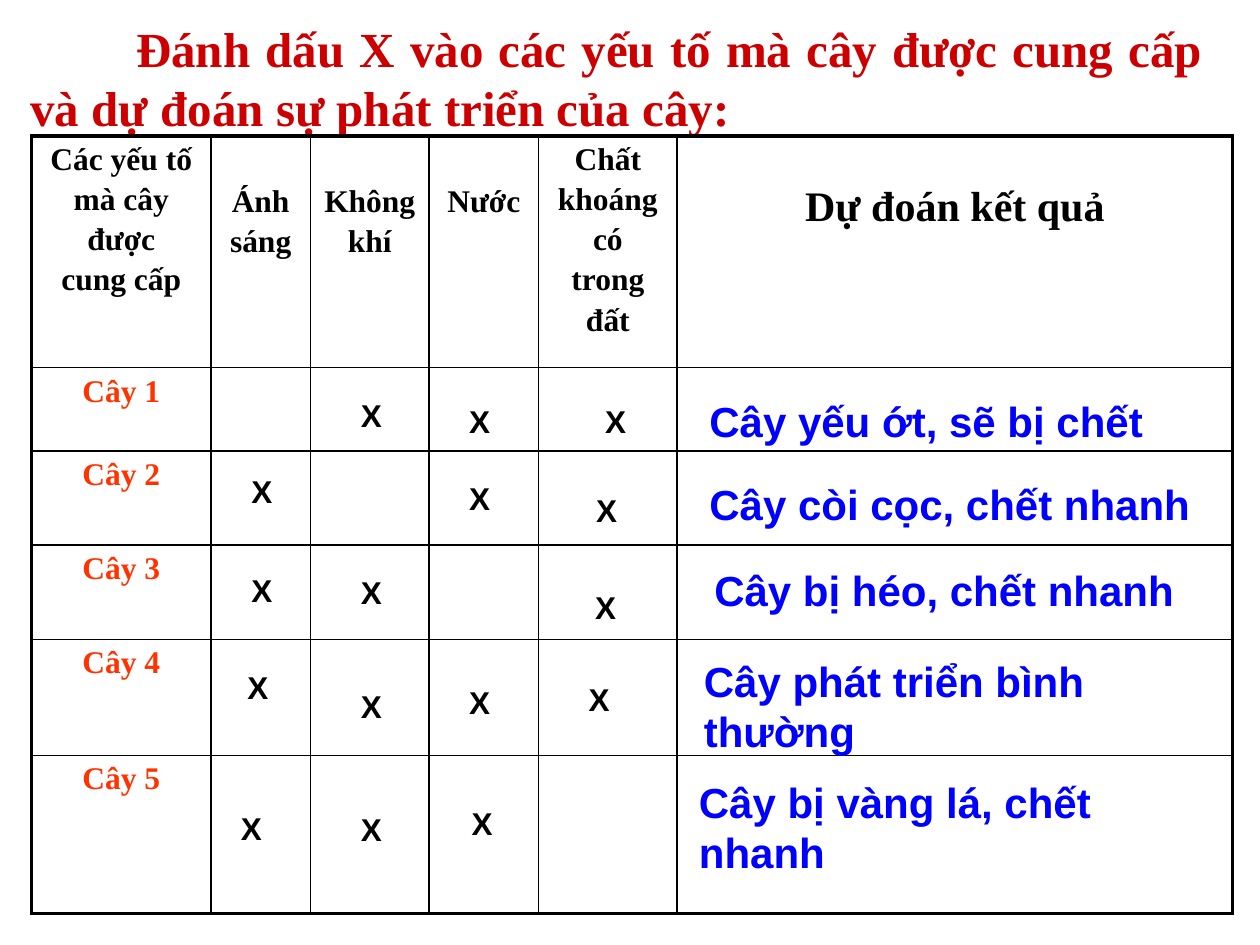
from itertools import accumulate

from lxml import etree
from pptx import Presentation
from pptx.dml.color import RGBColor
from pptx.enum.text import MSO_ANCHOR, MSO_AUTO_SIZE, PP_ALIGN
from pptx.oxml.ns import qn
from pptx.util import Cm, Pt

CENTER, LEFT, JUSTIFY = PP_ALIGN.CENTER, PP_ALIGN.LEFT, PP_ALIGN.JUSTIFY
TOP = MSO_ANCHOR.TOP
NO_AUTOFIT = MSO_AUTO_SIZE.NONE

BLACK = RGBColor(0x00, 0x00, 0x00)
RED = RGBColor(0xCC, 0x00, 0x00)
ORANGE = RGBColor(0xFF, 0x33, 0x00)
BLUE = RGBColor(0x00, 0x00, 0xFF)
SERIF, SANS = "Times New Roman", "Arial"

THIN, THICK = Pt(1), Pt(2.25)
COLUMN_WIDTHS = [3.61, 2.01, 2.39, 2.21, 2.79, 11.2]
ROW_HEIGHTS = [4.67, 1.68, 1.9, 1.9, 2.34, 3.18]
LIGHT, AIR, WATER, MINERALS, RESULT = range(1, 6)

# Heading, size in points, top margin in cm
HEADINGS = [
    ("Các yếu tố\nmà cây\nđược\ncung cấp", 18, 0.13),
    ("Ánh\nsáng", 18, 0.97),
    ("Không\nkhí", 18, 0.97),
    ("Nước", 18, 0.97),
    ("Chất\nkhoáng\ncó\ntrong\nđất", 18, 0.13),
    ("Dự đoán kết quả", 24, 0.97),
]

# Per plant: offset in cm of each X inside its cell, then the prediction
# with its offset and width
PLANTS = [
    ({AIR: (0.73, 0.44), WATER: (0.52, 0.57), MINERALS: (1.05, 0.57)},
     "Cây yếu ớt, sẽ bị chết", (0.4, 0.44), 10.39),
    ({LIGHT: (0.53, 0.31), WATER: (0.52, 0.44), MINERALS: (0.87, 0.69)},
     "Cây còi cọc, chết nhanh", (0.4, 0.44), 10.59),
    ({LIGHT: (0.53, 0.39), AIR: (0.73, 0.44), MINERALS: (0.85, 0.74)},
     "Cây bị héo, chết nhanh", (0.5, 0.26), 10.59),
    ({LIGHT: (0.45, 0.45), AIR: (0.73, 0.83), WATER: (0.52, 0.75),
      MINERALS: (0.72, 0.7)},
     "Cây phát triển bình thường", (0.29, 0.19), 10.39),
    ({LIGHT: (0.32, 0.95), AIR: (0.73, 0.98), WATER: (0.57, 0.85)},
     "Cây bị vàng lá, chết nhanh", (0.19, 0.29), 9.93),
]


def write(frame, text, font_name, size, color, align):
    frame.text = text
    for index, paragraph in enumerate(frame.paragraphs):
        paragraph.alignment = align
        paragraph.space_before = Pt(3 if index else 0)
        for run in paragraph.runs:
            run.font.name = font_name
            run.font.size = Pt(size)
            run.font.bold = True
            run.font.color.rgb = color


def set_borders(cell, widths):
    """Draw black left, right, top and bottom borders, in that order."""
    properties = cell._tc.get_or_add_tcPr()
    for index, (side, width) in enumerate(zip("LRTB", widths)):
        line = etree.Element(qn(f"a:ln{side}"), w=str(width))
        fill = etree.SubElement(line, qn("a:solidFill"))
        etree.SubElement(fill, qn("a:srgbClr"), val=str(BLACK))
        properties.insert(index, line)


def add_title(slide, left, top, width, height):
    title = slide.shapes.title
    title.left, title.top = Cm(left), Cm(top)
    title.width, title.height = Cm(width), Cm(height)
    frame = title.text_frame
    frame.word_wrap = True
    frame.auto_size = NO_AUTOFIT
    frame.vertical_anchor = TOP
    write(frame, "Đánh dấu X vào các yếu tố mà cây được cung cấp "
          "và dự đoán sự phát triển của cây:", SERIF, 28, RED, JUSTIFY)
    paragraph = frame.paragraphs[0]
    paragraph.line_spacing = Pt(33.7)
    paragraph._p.get_or_add_pPr().set("indent", str(Cm(2.13)))


def add_factor_table(slide, left, top):
    rows, columns = len(ROW_HEIGHTS), len(COLUMN_WIDTHS)
    table = slide.shapes.add_table(
        rows, columns, Cm(left), Cm(top),
        Cm(sum(COLUMN_WIDTHS)), Cm(sum(ROW_HEIGHTS))).table
    table.first_row = table.horz_banding = False
    for column, width in zip(table.columns, COLUMN_WIDTHS):
        column.width = Cm(width)
    for row, height in zip(table.rows, ROW_HEIGHTS):
        row.height = Cm(height)

    for r in range(rows):
        for c in range(columns):
            cell = table.cell(r, c)
            cell.fill.background()
            on_edge = (c == 0, c == columns - 1, r == 0, r == rows - 1)
            set_borders(cell, [THICK if edge else THIN for edge in on_edge])

    for c, (heading, size, margin) in enumerate(HEADINGS):
        cell = table.cell(0, c)
        cell.margin_top = Cm(margin)
        write(cell.text_frame, heading, SERIF, size, BLACK, CENTER)
    for r in range(1, rows):
        write(table.cell(r, 0).text_frame, f"Cây {r}", SERIF, 18, ORANGE, CENTER)


def add_answer(slide, left, top, width, height, text, size, color, align):
    box = slide.shapes.add_textbox(Cm(left), Cm(top), Cm(width), Cm(height))
    box.text_frame.word_wrap = True
    write(box.text_frame, text, SANS, size, color, align)


def add_answers(slide, left, top):
    """Lay the X marks and predictions over the table at left, top."""
    cell_lefts = list(accumulate(COLUMN_WIDTHS, initial=left))
    cell_tops = list(accumulate(ROW_HEIGHTS, initial=top))
    for row_top, (marks, prediction, (dx, dy), width) in zip(cell_tops[1:], PLANTS):
        for column, (mark_dx, mark_dy) in marks.items():
            add_answer(slide, cell_lefts[column] + mark_dx, row_top + mark_dy,
                       1, 1.02, "X", 18, BLACK, CENTER)
        add_answer(slide, cell_lefts[RESULT] + dx, row_top + dy,
                   width, 1.28, prediction, 24, BLUE, LEFT)


def main():
    presentation = Presentation()
    presentation.slide_width, presentation.slide_height = Cm(25.4), Cm(19.05)
    slide = presentation.slides.add_slide(presentation.slide_layouts[5])
    add_title(slide, 0.36, 0.25, 24.13, 2.49)
    add_factor_table(slide, 0.64, 2.74)
    add_answers(slide, 0.64, 2.74)
    presentation.save("out.pptx")


if __name__ == "__main__":
    main()
